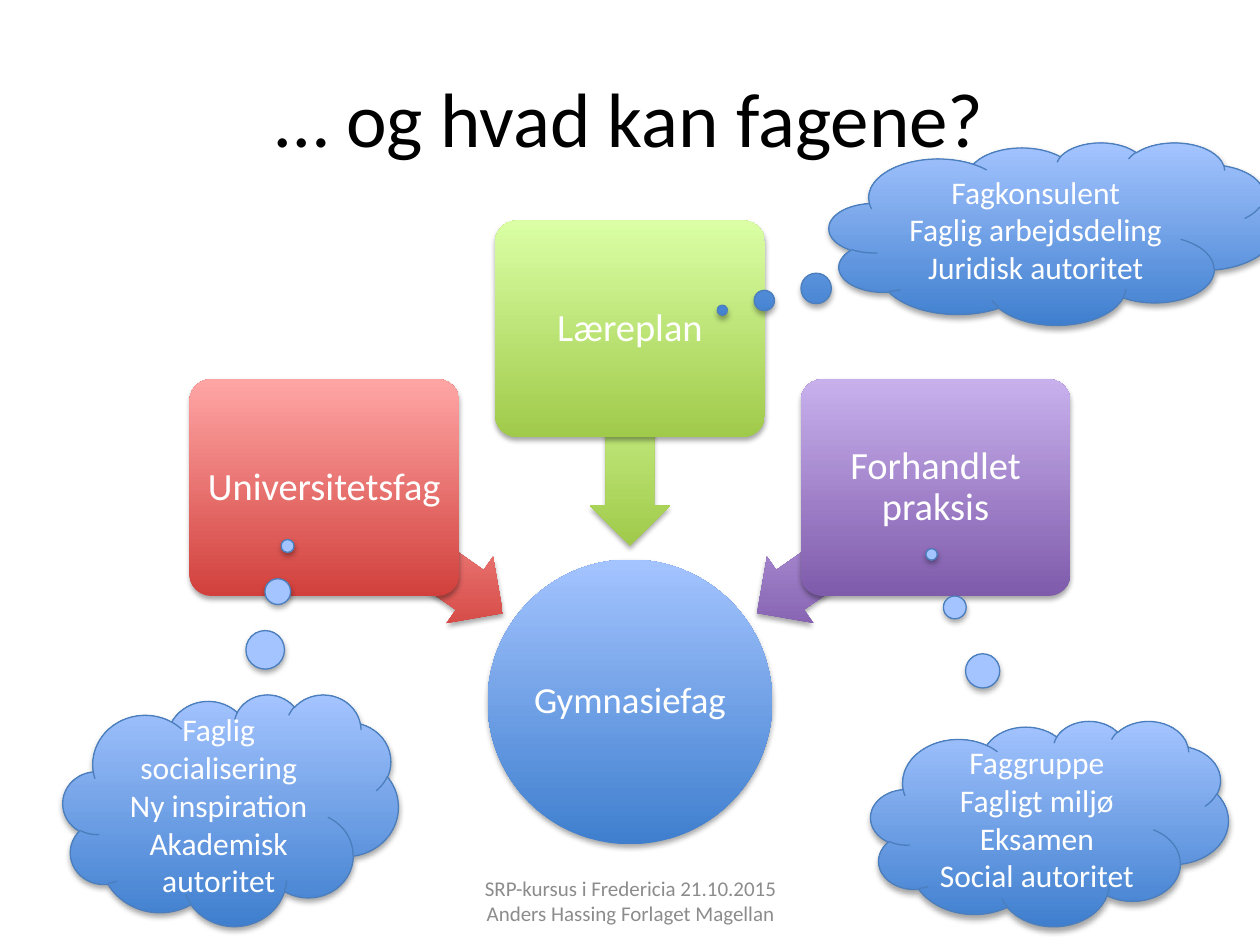
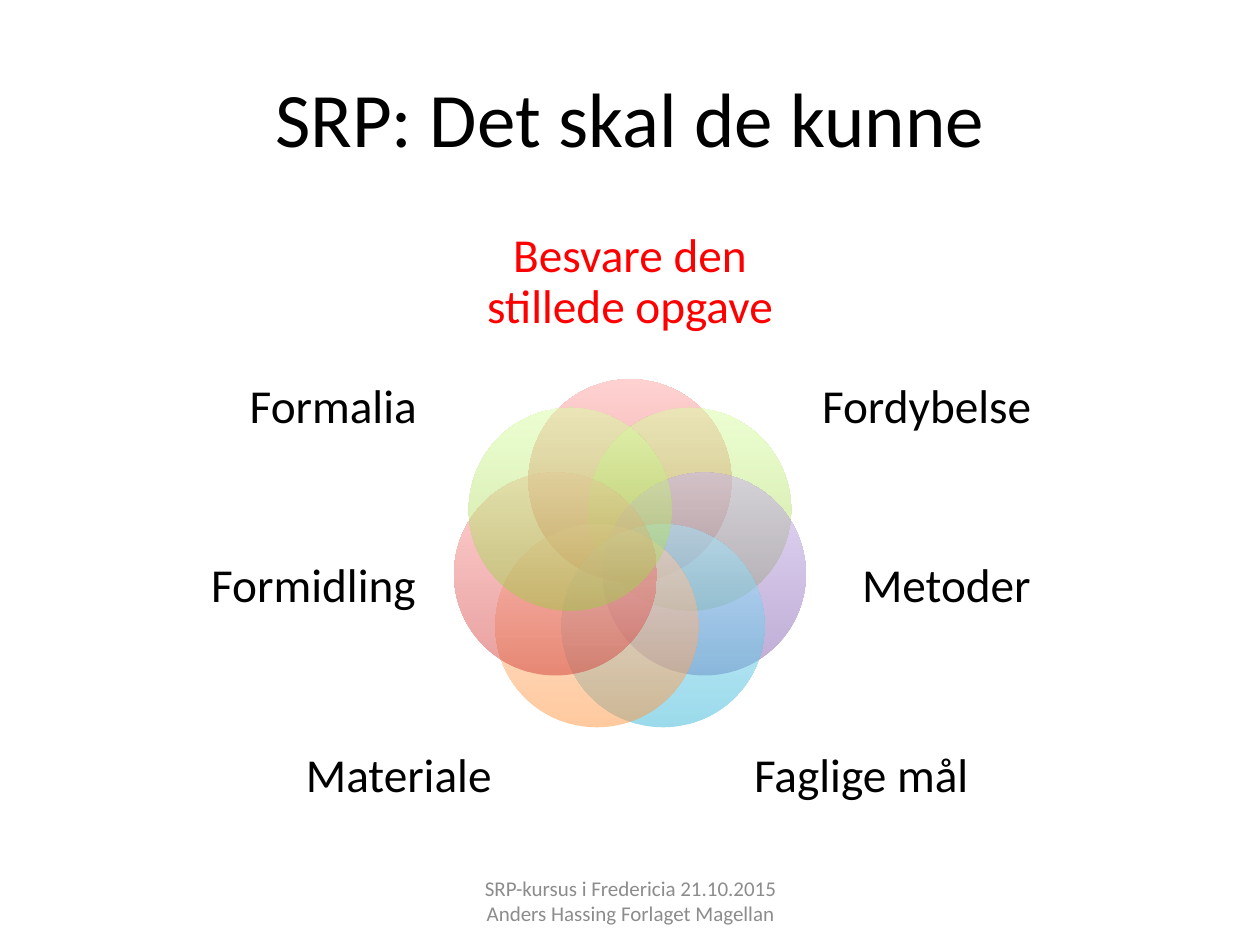
from math import cos, pi, sin

from lxml.etree import SubElement
from pptx import Presentation
from pptx.dml.color import RGBColor
from pptx.enum.shapes import MSO_SHAPE
from pptx.enum.text import MSO_ANCHOR, PP_ALIGN
from pptx.oxml.ns import qn
from pptx.util import Cm, Pt

COLOURS = {
    "black": "000000", "white": "FFFFFF", "grey": "8C8C8C", "alert": "FF0000",
    "outline": "4B7EBC",
    "blue_low": "3F7FCE", "blue_high": "A4C4FF",
    "red_low": "D1403C", "red_high": "FFA6A5",
    "green_low": "A0CA4A", "green_high": "DAFFA5",
    "purple_low": "7F5BAB", "purple_high": "C8B0ED",
    "teal_low": "39B7D8", "teal_high": "A7E6FF",
    "orange_low": "FF953E", "orange_high": "FFD2BD",
}
FONT = "Calibri"
MIDDLE = 12.7  # horizontal centre of the slide, cm


def write(holder, text, size, colour="white", inset=None, line_spacing=None):
    """Centre text in a shape or text box, one paragraph per line."""
    frame = holder.text_frame
    frame.word_wrap = True
    frame.vertical_anchor = MSO_ANCHOR.MIDDLE
    if inset is not None:
        frame.margin_left = frame.margin_right = Cm(inset)
        frame.margin_top = frame.margin_bottom = Cm(inset)
    frame.text = text
    for paragraph in frame.paragraphs:
        paragraph.alignment = PP_ALIGN.CENTER
        paragraph.line_spacing = line_spacing
        paragraph.font.name = FONT
        paragraph.font.size = Pt(size)
        paragraph.font.color.rgb = RGBColor.from_string(COLOURS[colour])


def add_glossy(slide, kind, centre, size, hue, adjust=(), opacity=None):
    """Add a shape with a vertical gradient; it casts a shadow when opaque."""
    (x, y), (width, height) = centre, size
    shape = slide.shapes.add_shape(
        kind, Cm(x - width / 2), Cm(y - height / 2), Cm(width), Cm(height))
    for index, value in enumerate(adjust):
        shape.adjustments[index] = value
    shape.fill.gradient()
    shape.fill.gradient_angle = 90
    for stop, end in zip(shape.fill.gradient_stops, ("low", "high")):
        stop.color.rgb = RGBColor.from_string(COLOURS[f"{hue}_{end}"])
    shape.line.fill.background()
    shape.shadow.inherit = False

    properties = shape._element.spPr
    gradient = properties.find(qn("a:gradFill"))
    gradient.set("rotWithShape", "0")
    if opacity:
        for tint in gradient.iter(qn("a:srgbClr")):
            SubElement(tint, qn("a:alpha"), val=str(opacity * 1000))
    else:
        shadow = SubElement(
            properties.find(qn("a:effectLst")), qn("a:outerShdw"),
            blurRad=str(Pt(3.1)), dist=str(Pt(1.8)), dir="5400000", rotWithShape="0")
        shade = SubElement(shadow, qn("a:srgbClr"), val=COLOURS["black"])
        SubElement(shade, qn("a:alpha"), val="35000")
    return shape


deck = Presentation()
deck.slide_width, deck.slide_height = Cm(25.4), Cm(19.05)

# Title and footer shared by both slides
slides = []
for heading in ("… og hvad kan fagene?", "SRP: Det skal de kunne"):
    slide = deck.slides.add_slide(deck.slide_layouts[6])
    title = slide.shapes.add_textbox(Cm(1.27), Cm(0.76), Cm(22.86), Cm(3.18))
    write(title, heading, 44, "black")
    footer = slide.shapes.add_textbox(Cm(8.69), Cm(17.65), Cm(8.05), Cm(1.02))
    write(footer, "SRP-kursus i Fredericia 21.10.2015\nAnders Hassing Forlaget Magellan",
          12, "grey")
    slides.append(slide)
subjects, skills = slides

# Slide 1: three sources pointing at the school subject
hub = add_glossy(subjects, MSO_SHAPE.OVAL, (MIDDLE, 14.15), (5.74, 5.74), "blue")
write(hub, "Gymnasiefag", 21, inset=0.03, line_spacing=0.9)

sources = [
    ("Universitetsfag", "red", -1, 9.83, 11.1, 215),
    ("Læreplan", "green", 0, 6.63, 8.81, 270),
    ("Forhandlet praksis", "purple", 1, 9.83, 11.1, 325),
]
for name, hue, side, source_y, arrow_y, angle in sources:
    arrow = add_glossy(subjects, MSO_SHAPE.LEFT_ARROW, (MIDDLE + side * 4.36, arrow_y),
                       (4.39, 1.63), hue, (0.6, 0.5))
    arrow.rotation = angle
    source = add_glossy(subjects, MSO_SHAPE.ROUNDED_RECTANGLE,
                        (MIDDLE + side * 6.16, source_y), (5.44, 4.37), hue, (0.1,))
    write(source, name, 22, inset=0.13, line_spacing=0.9)

thoughts = [
    ("Fagkonsulent\nFaglig arbejdsdeling\nJuridisk autoritet",
     (21.2, 4.71), (8.97, 3.68), (-0.74, 0.42)),
    ("Faglig socialisering\nNy inspiration\nAkademisk autoritet",
     (4.65, 16.33), (6.76, 4.67), (0.17, -1.14)),
    ("Faggruppe\nFagligt miljø\nEksamen\nSocial autoritet",
     (21.16, 16.6), (7.21, 4.14), (-0.33, -1.31)),
]
for text, centre, size, tail in thoughts:
    thought = add_glossy(subjects, MSO_SHAPE.CLOUD_CALLOUT, centre, size, "blue", tail)
    thought.line.color.rgb = RGBColor.from_string(COLOURS["outline"])
    thought.line.width = Pt(0.75)
    write(thought, text, 18)

# Slide 2: seven overlapping circles, clockwise from the top
RING_Y, RING_RADIUS, CIRCLE = 11.23, 1.54, 4.09
LABEL_HEIGHT = 2.75
requirements = [
    ("Besvare den stillede opgave", "red", 0, 5.7, 7.65),
    ("Fordybelse", "green", 5.98, 8.22, 4.5),
    ("Metoder", "purple", 6.38, 11.84, 4.5),
    ("Faglige mål", "teal", 4.66, 15.67, 4.7),
    ("Materiale", "orange", -4.66, 15.67, 4.7),
    ("Formidling", "red", -6.38, 11.84, 4.5),
    ("Formalia", "green", -5.98, 8.22, 4.5),
]
for index, (name, hue, offset, label_y, width) in enumerate(requirements):
    angle = 2 * pi * index / len(requirements)
    centre = (MIDDLE + RING_RADIUS * sin(angle), RING_Y - RING_RADIUS * cos(angle))
    add_glossy(skills, MSO_SHAPE.OVAL, centre, (CIRCLE, CIRCLE), hue, opacity=50)
    label = skills.shapes.add_textbox(
        Cm(MIDDLE + offset - width / 2), Cm(label_y - LABEL_HEIGHT / 2),
        Cm(width), Cm(LABEL_HEIGHT))
    write(label, name, 27, "black" if index else "alert", inset=0, line_spacing=0.9)

deck.save("out.pptx")
